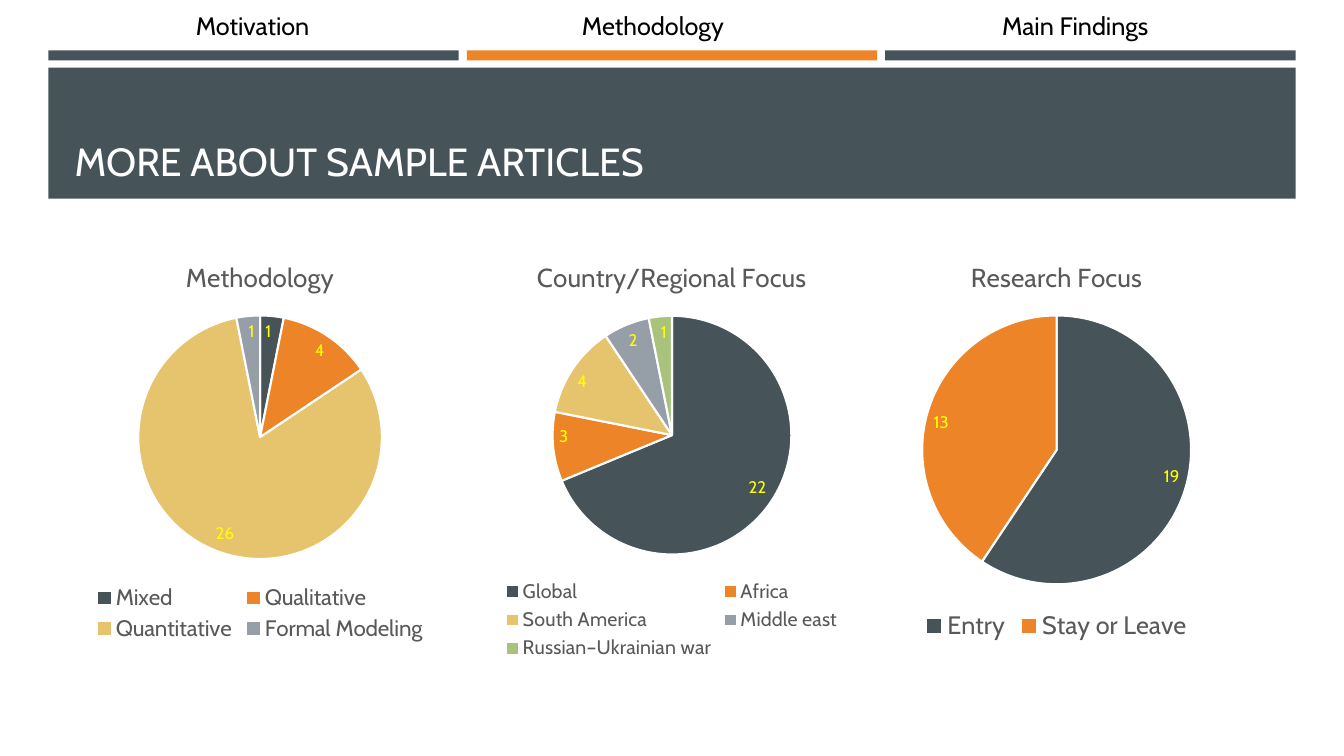
import pptx
import pptx.util
import pptx.chart.data
import pptx.dml.color
import pptx.enum.chart
import pptx.enum.shapes
import pptx.enum.text

RGB = pptx.dml.color.RGBColor
SLATE = RGB(0x46, 0x53, 0x59)
ORANGE = RGB(0xED, 0x84, 0x28)
SAND = RGB(0xE6, 0xC4, 0x6D)
STEEL = RGB(0x96, 0x9F, 0xA7)
GREEN = RGB(0xA9, 0xC3, 0x7C)
GREY = RGB(0x59, 0x59, 0x59)
YELLOW = RGB(0xFF, 0xFF, 0x00)
WHITE = RGB(0xFF, 0xFF, 0xFF)
BLACK = RGB(0x00, 0x00, 0x00)
SLICES = [SLATE, ORANGE, SAND, STEEL, GREEN]
FONT = "Cabin"
SCALE = 9144

TABS = [
    ("Motivation", 47, SLATE),
    ("Methodology", 444, ORANGE),
    ("Main Findings", 863, SLATE),
]
PIES = [
    ("Methodology", (36, 239, 444, 402), 16,
     {"Mixed": 1, "Qualitative": 4, "Quantitative": 26, "Formal Modeling": 1}),
    ("Country/Regional Focus", (433, 239, 467, 420), 14,
     {"Global": 22, "Africa": 3, "South America": 4, "Middle east": 2,
      "Russian–Ukrainian war": 1}),
    ("Research Focus", (826, 239, 444, 402), 18,
     {"Entry": 19, "Stay or Leave": 13}),
]


def emu(box):
    return [pptx.util.Emu(n * SCALE) for n in box]


def style(font, size, color):
    font.name = FONT
    font.size = pptx.util.Pt(size)
    font.bold = False
    font.color.rgb = color


def add_bar(slide, box, color):
    bar = slide.shapes.add_shape(pptx.enum.shapes.MSO_SHAPE.RECTANGLE, *emu(box))
    bar.shadow.inherit = False
    bar.fill.solid()
    bar.fill.fore_color.rgb = color
    bar.line.fill.background()
    return bar


def write(frame, text, size, color, align, anchor):
    frame.text = text
    frame.word_wrap = True
    frame.vertical_anchor = anchor
    line = frame.paragraphs[0]
    line.alignment = align
    style(line.runs[0].font, size, color)


def add_tabs(slide, box):
    left, top, width, height = box
    step = 415
    for i, (name, x, color) in enumerate(TABS):
        add_bar(slide, (left + i * step, top + height, width, 10), color)
        label = slide.shapes.add_textbox(*emu((x, top, width, height)))
        write(label.text_frame, name, 18, BLACK,
              pptx.enum.text.PP_ALIGN.CENTER, pptx.enum.text.MSO_ANCHOR.MIDDLE)


def add_head(slide, box, text):
    left, top, width, height = box
    band = add_bar(slide, box, SLATE)
    title = slide.shapes.title
    title.element.addprevious(band.element)
    title.left, title.top, title.width, title.height = emu(
        (left + 16, top + 10, width - 31, height - 19))
    write(title.text_frame, text, 28, WHITE,
          pptx.enum.text.PP_ALIGN.LEFT, pptx.enum.text.MSO_ANCHOR.BOTTOM)


def add_pie(slide, box, name, size, parts):
    data = pptx.chart.data.CategoryChartData()
    data.categories = list(parts)
    data.add_series(name, list(parts.values()))
    chart = slide.shapes.add_chart(
        pptx.enum.chart.XL_CHART_TYPE.PIE, *emu(box), data).chart
    style(chart.font, 10, BLACK)

    chart.has_title = True
    chart.chart_title.include_in_layout = False
    head = chart.chart_title.text_frame
    head.text = name
    style(head.paragraphs[0].runs[0].font, 18.6, GREY)

    chart.has_legend = True
    chart.legend.position = pptx.enum.chart.XL_LEGEND_POSITION.BOTTOM
    chart.legend.include_in_layout = False
    style(chart.legend.font, size, GREY)

    plot = chart.plots[0]
    plot.vary_by_categories = True
    plot.has_data_labels = True
    labels = plot.data_labels
    labels.show_value = True
    labels.show_percentage = False
    labels.position = pptx.enum.chart.XL_LABEL_POSITION.INSIDE_END
    style(labels.font, 12, YELLOW)

    for i, color in enumerate(SLICES[:len(parts)]):
        slice = plot.series[0].points[i].format
        slice.fill.solid()
        slice.fill.fore_color.rgb = color
        slice.line.color.rgb = WHITE
        slice.line.width = pptx.util.Pt(1.5)


def main():
    deck = pptx.Presentation()
    deck.slide_width, deck.slide_height = emu((1333, 750))
    slide = deck.slides.add_slide(deck.slide_layouts[5])
    add_head(slide, (48, 67, 1237, 130), "MORE ABOUT SAMPLE ARTICLES")
    add_tabs(slide, (48, 0, 407, 50))
    for name, box, size, parts in PIES:
        add_pie(slide, box, name, size, parts)
    deck.save("out.pptx")


if __name__ == "__main__":
    main()
